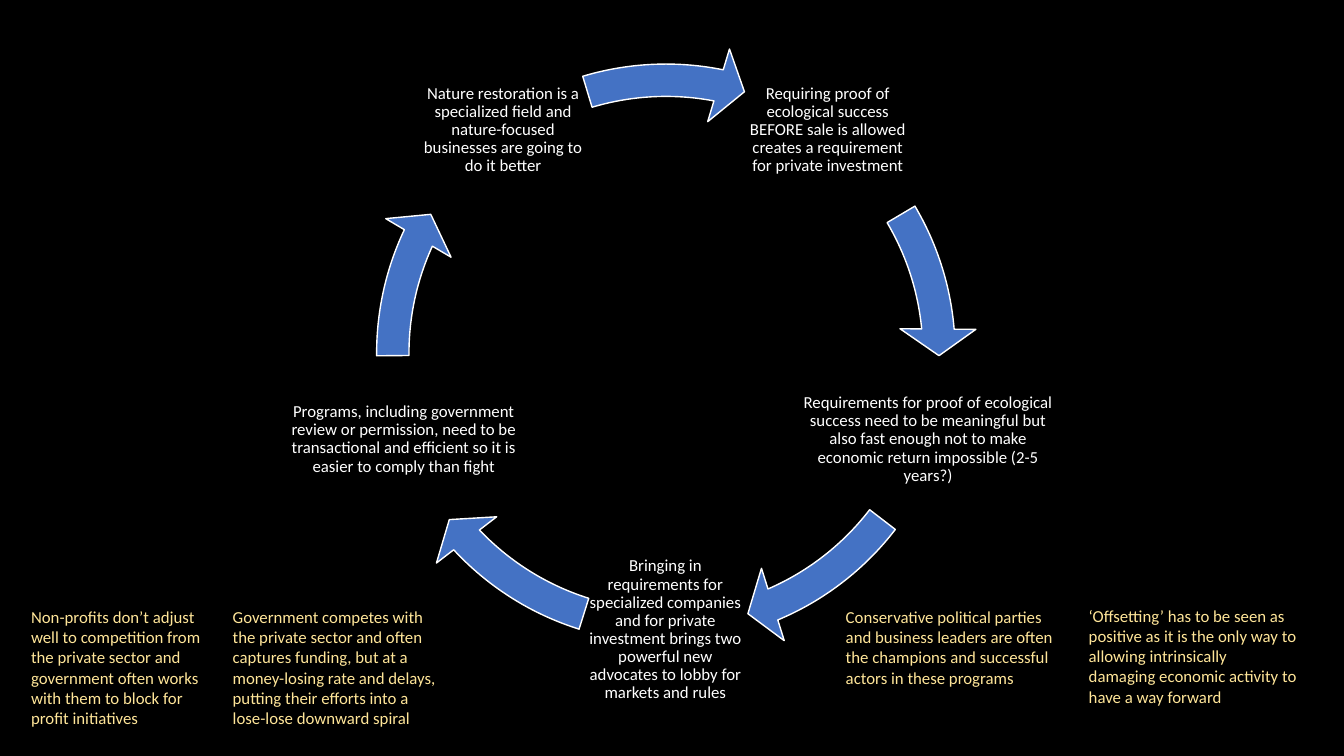
from pptx import Presentation
from pptx.dml.color import RGBColor
from pptx.enum.shapes import MSO_SHAPE
from pptx.enum.text import MSO_ANCHOR, MSO_AUTO_SIZE, PP_ALIGN
from pptx.util import Inches, Pt

COLORS = {"background": "000000", "arrow": "4472C4", "step": "FFFFFF", "note": "FFE699"}

# left, top, width, height, text, then start and end angle of the arrow that follows
STEP_SIZE = 1.64
STEPS = [
    (7.39, 0.47, STEP_SIZE,
     "Requiring proof of ecological success BEFORE sale is allowed creates "
     "a requirement for private investment", 329.42, 354.91),
    (7.95, 3.54, 2.51,
     "Requirements for proof of ecological success need to be meaningful but also "
     "fast enough not to make economic return impossible (2-5 years?)", 37.53, 66.94),
    (5.78, 5.43, STEP_SIZE,
     "Bringing in requirements for specialized companies and for private investment "
     "brings two powerful new advocates to lobby for markets and rules", 107.47, 136.88),
    (2.87, 3.54, 2.27,
     "Programs, including government review or permission, need to be transactional "
     "and efficient so it is easier to comply than fight", 179.5, 204.99),
    (4.17, 0.47, STEP_SIZE,
     "Nature restoration is a specialized field and nature-focused businesses "
     "are going to do it better", 253.29, 281.12),
]
NOTES = [
    (0.21, 5.97, 2, 1.31,
     "Non-profits don’t adjust well to competition from the private sector and "
     "government often works with them to block for profit initiatives"),
    (2.21, 5.97, 2.27, 1.31,
     "Government competes with the private sector and often captures funding, but at a "
     "money-losing rate and delays, putting their efforts into a lose-lose downward spiral"),
    (8.29, 5.97, 2.27, 0.91,
     "Conservative political parties and business leaders are often the champions and "
     "successful actors in these programs"),
    (10.7, 5.96, 2.27, 1.11,
     "‘Offsetting’ has to be seen as positive as it is the only way to allowing "
     "intrinsically damaging economic activity to have a way forward"),
]
STEP_FRAME = {
    "vertical_anchor": MSO_ANCHOR.MIDDLE,
    "margin_left": Inches(0.02), "margin_right": Inches(0.02),
    "margin_top": Inches(0.02), "margin_bottom": Inches(0.02),
}
STEP_PARAGRAPH = {"alignment": PP_ALIGN.CENTER, "line_spacing": 0.9}
NOTE_FRAME = {"auto_size": MSO_AUTO_SIZE.SHAPE_TO_FIT_TEXT}
FONT = {"name": "Calibri", "size": Pt(12)}


def set_attributes(target, values):
    for name, value in values.items():
        setattr(target, name, value)


def add_text(group, box, text, color, frame, paragraph):
    """Add a wrapped text box; box is left, top, width, height in inches."""
    tf = group.shapes.add_textbox(*map(Inches, box)).text_frame
    tf.word_wrap = True
    set_attributes(tf, frame)
    p = tf.paragraphs[0]
    set_attributes(p, paragraph)
    r = p.add_run()
    r.text = text
    set_attributes(r.font, FONT)
    r.font.color.rgb = RGBColor.from_string(COLORS[color])


prs = Presentation()
prs.slide_width, prs.slide_height = Inches(13.33), Inches(7.5)
s = prs.slides.add_slide(prs.slide_layouts[6])
s.background.fill.solid()
s.background.fill.fore_color.rgb = RGBColor.from_string(COLORS["background"])

cycle = s.shapes.add_group_shape()
for left, top, width, text, start, end in STEPS:
    add_text(cycle, (left, top, width, STEP_SIZE), text, "step", STEP_FRAME, STEP_PARAGRAPH)
    sp = cycle.shapes.add_shape(MSO_SHAPE.CIRCULAR_ARROW, Inches(3.52), Inches(0.42),
                                Inches(6.17), Inches(6.17))
    # Angles are stored in 60000ths of a degree, adjustments in 100000ths
    adjustments = (0.052, 5.59 * 0.6, end * 0.6, start * 0.6, 0.061)
    for i, value in enumerate(adjustments):
        sp.adjustments[i] = value
    sp.shadow.inherit = False
    sp.fill.solid()
    sp.fill.fore_color.rgb = RGBColor.from_string(COLORS["arrow"])
    sp.line.color.rgb = RGBColor.from_string(COLORS["step"])
    sp.line.width = Pt(1)

notes = s.shapes.add_group_shape()
for *box, text in NOTES:
    add_text(notes, box, text, "note", NOTE_FRAME, {})

prs.save("out.pptx")
